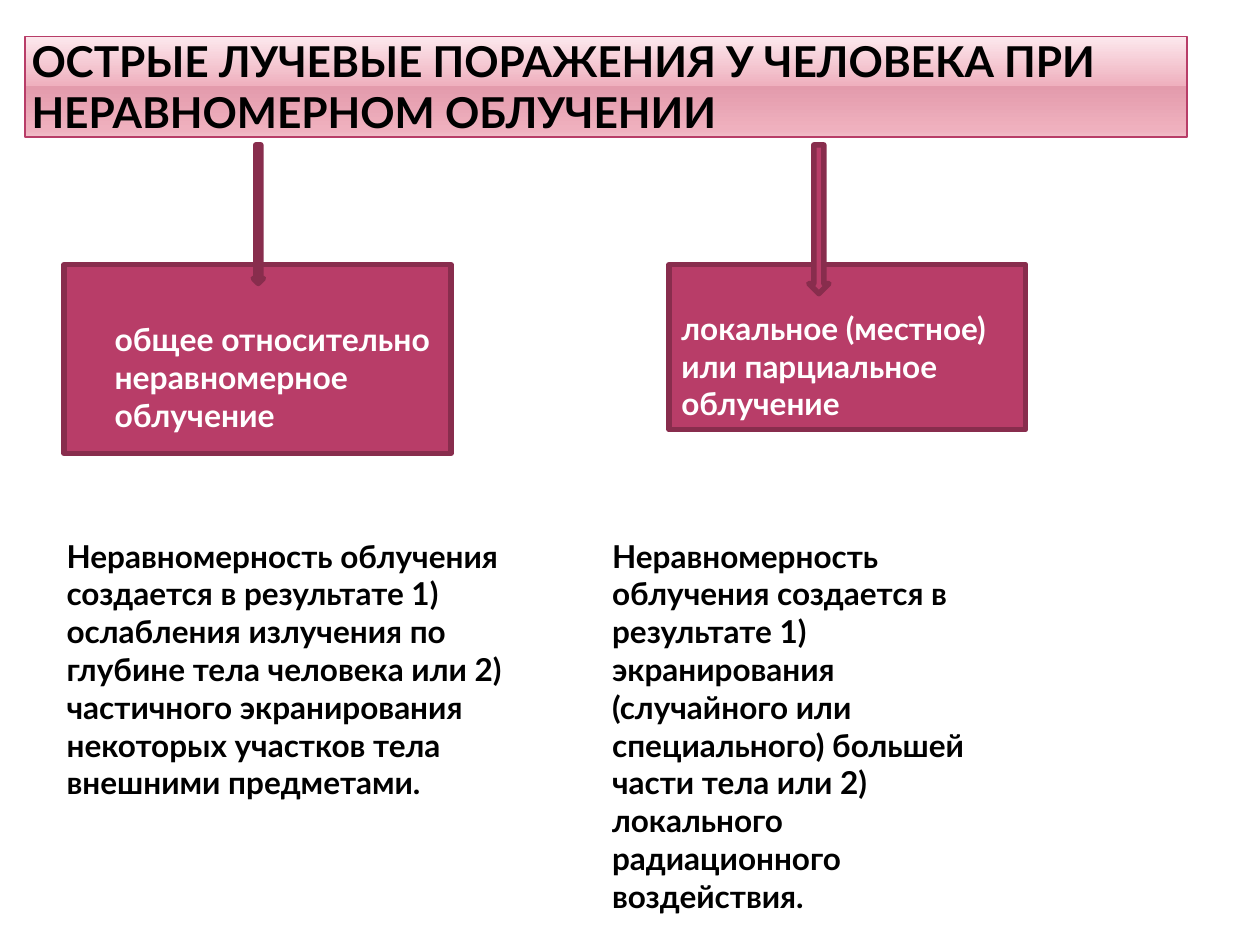
"""Build a slide on acute radiation injuries under non-uniform exposure."""
from lxml.etree import SubElement
from pptx import Presentation
from pptx.dml.color import RGBColor
from pptx.enum.shapes import MSO_SHAPE as Shape
from pptx.enum.text import MSO_ANCHOR as Anchor, PP_ALIGN as Align
from pptx.oxml.ns import qn
from pptx.util import Pt

FONT = "Lato"
ROSE, DARK_ROSE, BLACK, WHITE = "B83D68", "882D4D", "000000", "FFFFFF"
TITLE = "ОСТРЫЕ ЛУЧЕВЫЕ ПОРАЖЕНИЯ У ЧЕЛОВЕКА ПРИ НЕРАВНОМЕРНОМ ОБЛУЧЕНИИ"
TITLE_FRAME = (14.4, 20.9, 663.8, 57.6)
TITLE_STOPS = [(0, "FCE8ED"), (49, "EFB0BE"), (49, "E39BAC"), (92, "EFB0BE"), (100, "F0BEC9")]
BRANCHES = [
    {
        "kind": "общее относительно неравномерное облучение",
        "kind_frame": (36.7, 151.2, 221, 108),
        "kind_size": 18.2,
        "kind_margins": (28.8, 31.5, 7.2, 3.6),
        "arrow_frame": (144.7, 82.8, 5.8, 79.2),
        "cause": "Неравномерность облучения создается в результате 1) ослабления излучения "
                 "по глубине тела человека или 2) частичного экранирования некоторых участков "
                 "тела внешними предметами.",
        "cause_frame": (31, 281.5, 266.4, 203.8),
    },
    {
        "kind": "локальное (местное) или парциальное облучение",
        "kind_frame": (382.3, 151.2, 203.8, 94.3),
        "kind_size": 18,
        "kind_margins": (7.2, 25.2, 7.2, 3.6),
        "arrow_frame": (462.2, 82.8, 11.5, 85),
        "cause": "Неравномерность облучения создается в результате 1) экранирования "
                 "(случайного или специального) большей части тела или 2) локального "
                 "радиационного воздействия.",
        "cause_frame": (342.7, 281.5, 232.6, 247),
    },
]
CAUSE_MARGINS = (7.2, 25.2, 7.2, 3.6)


def color(value):
    return RGBColor.from_string(value)


def add_block(page, kind, frame, line_width):
    block = page.shapes.add_shape(kind, *map(Pt, frame))
    block.shadow.inherit = False
    block.fill.solid()
    block.fill.fore_color.rgb = color(ROSE)
    block.line.color.rgb = color(DARK_ROSE)
    block.line.width = Pt(line_width)
    return block


def write(box, text, size, ink, margins, anchor=Anchor.TOP):
    frame = box.text_frame
    frame.word_wrap = True
    frame.vertical_anchor = anchor
    frame.margin_left, frame.margin_top, frame.margin_right, frame.margin_bottom = map(Pt, margins)
    frame.text = text
    para = frame.paragraphs[0]
    para.alignment = Align.LEFT
    font = para.runs[0].font
    font.name, font.size, font.bold = FONT, Pt(size), True
    font.color.rgb = color(ink)


def fill_gradient(block, stops):
    block.fill.gradient()
    block.fill.gradient_angle = 270
    stop_list = block.element.spPr.find(qn("a:gradFill")).find(qn("a:gsLst"))
    for stop in list(stop_list):
        stop_list.remove(stop)
    for percent, value in stops:
        stop = SubElement(stop_list, qn("a:gs"), pos=str(percent * 1000))
        SubElement(stop, qn("a:srgbClr"), val=value)


def main():
    deck = Presentation()
    deck.slide_width, deck.slide_height = Pt(720), Pt(540)
    page = deck.slides.add_slide(deck.slide_layouts[6])

    title = add_block(page, Shape.RECTANGLE, TITLE_FRAME, 0.9)
    title.line.color.rgb = color(ROSE)
    fill_gradient(title, TITLE_STOPS)
    write(title, TITLE, 24.3, BLACK, (3.6, 0, 3.6, 0), Anchor.BOTTOM)

    for branch in BRANCHES:
        box = add_block(page, Shape.RECTANGLE, branch["kind_frame"], 3.15)
        write(box, branch["kind"], branch["kind_size"], WHITE, branch["kind_margins"])
        add_block(page, Shape.DOWN_ARROW, branch["arrow_frame"], 3.15)
        cause = page.shapes.add_textbox(*map(Pt, branch["cause_frame"]))
        write(cause, branch["cause"], 18, BLACK, CAUSE_MARGINS)

    deck.save("out.pptx")


if __name__ == "__main__":
    main()
